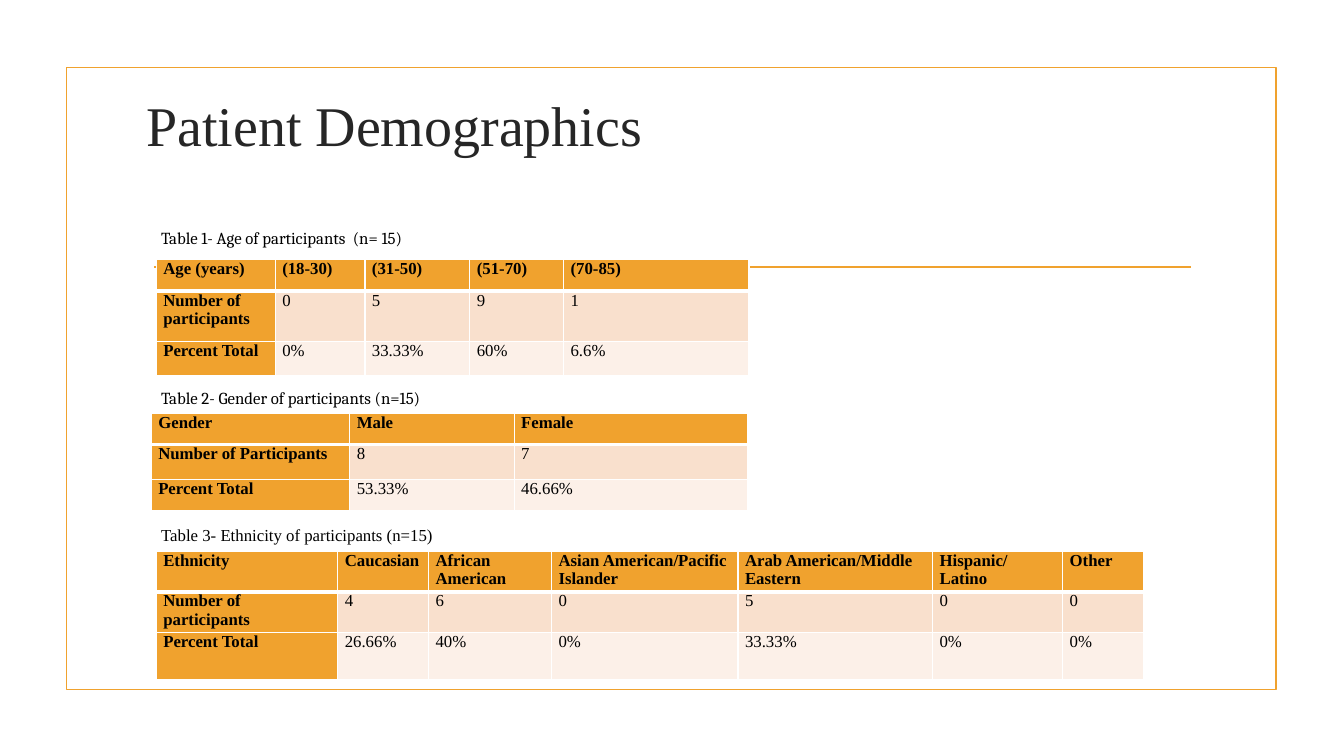
from lxml import etree
from pptx import Presentation
from pptx.dml.color import RGBColor
from pptx.enum.shapes import MSO_CONNECTOR as Connector, MSO_SHAPE as Shape
from pptx.enum.text import MSO_ANCHOR as Anchor, PP_ALIGN as Align
from pptx.oxml.ns import qn
from pptx.util import Inches, Pt

ORANGE, PEACH, CREAM = "F0A22E", "F9E0CD", "FCF0E8"
WHITE, BLACK, CHARCOAL = "FFFFFF", "000000", "262626"
SERIF, CAPTION_FONT = "Times New Roman", "Cambria"

# Each entry: caption, caption font, caption box, table corner,
# column widths, row heights, cell texts
TABLES = [
    ("Table 1- Age of participants  (n= 15)", CAPTION_FONT,
     (1.5, 2.21, 3.66, 0.3), (1.55, 2.57),
     [1.18, 0.89, 1.04, 0.93, 1.84], [0.32, 0.5, 0.34],
     [["Age (years)", "(18-30)", "(31-50)", "(51-70)", "(70-85)"],
      ["Number of participants", "0", "5", "9", "1"],
      ["Percent Total", "0%", "33.33%", "60%", "6.6%"]]),
    ("Table 2- Gender of participants (n=15)", CAPTION_FONT,
     (1.5, 3.8, 2.85, 0.3), (1.5, 4.1),
     [1.97, 1.63, 2.32], [0.31, 0.35, 0.31],
     [["Gender", "Male", "Female"],
      ["Number of Participants", "8", "7"],
      ["Percent Total", "53.33%", "46.66%"]]),
    ("Table 3- Ethnicity of participants (n=15)", SERIF,
     (1.5, 5.16, 2.99, 0.3), (1.55, 5.47),
     [1.8, 0.9, 1.22, 1.85, 1.93, 1.29, 0.8], [0.39, 0.4, 0.47],
     [["Ethnicity", "Caucasian", "African American",
       "Asian American/Pacific Islander", "Arab American/Middle Eastern",
       "Hispanic/Latino", "Other"],
      ["Number of participants", "4", "6", "0", "5", "0", "0"],
      ["Percent Total", "26.66%", "40%", "0%", "33.33%", "0%", "0%"]]),
]


def color(value):
    return RGBColor.from_string(value)


def apply(target, formats):
    for name, value in formats.items():
        setattr(target, name, value)


def write(frame, text, size, font, ink, bold=False, align=Align.LEFT):
    para = frame.paragraphs[0]
    para.alignment = align
    span = para.add_run()
    span.text = text
    apply(span.font, {"size": Pt(size), "name": font, "bold": bold})
    span.font.color.rgb = color(ink)


def add_text(page, place, text, size, font, ink, anchor=Anchor.TOP,
             align=Align.LEFT, wrap=True):
    box = page.shapes.add_textbox(*map(Inches, place))
    apply(box.text_frame, {"word_wrap": wrap, "vertical_anchor": anchor})
    write(box.text_frame, text, size, font, ink, align=align)


def add_backdrop(page, left, top, width, height):
    # Border around the content
    border = page.shapes.add_shape(
        Shape.RECTANGLE, *map(Inches, (left, top, width, height)))
    border.shadow.inherit = False
    border.fill.background()
    # Rule below the title
    rule_top = top + 1.98
    rule = page.shapes.add_connector(
        Connector.STRAIGHT,
        *map(Inches, (left + 0.87, rule_top, left + 11.15, rule_top)))
    etree.SubElement(rule._element.spPr, qn("a:effectLst"))
    for outline in (border.line, rule.line):
        outline.color.rgb = color(ORANGE)
        outline.width = Pt(1.25)


def set_borders(cell, widths):
    properties = cell._tc.get_or_add_tcPr()
    for side, width in zip("LRTB", widths):
        edge = etree.SubElement(properties, qn(f"a:ln{side}"), w=str(Pt(width)))
        fill = etree.SubElement(edge, qn("a:solidFill"))
        etree.SubElement(fill, qn("a:srgbClr"), val=WHITE)


def fill_cell(cell, text, row, column):
    heading = row == 0 or column == 0
    set_borders(cell, (1, 1, 3 if row == 1 else 1, 3 if row == 0 else 1))
    cell.fill.solid()
    cell.fill.fore_color.rgb = color(
        ORANGE if heading else (PEACH, CREAM)[row - 1])
    apply(cell, {"margin_left": Inches(0.07), "margin_right": Inches(0.08),
                 "margin_top": 0, "margin_bottom": 0})
    write(cell.text_frame, text, 12, SERIF, BLACK, bold=heading)


def add_data_table(page, corner, widths, heights, rows):
    size = (sum(widths), sum(heights))
    table = page.shapes.add_table(
        len(rows), len(widths), *map(Inches, corner + size)).table
    for column, width in zip(table.columns, widths):
        column.width = Inches(width)
    for row, height in zip(table.rows, heights):
        row.height = Inches(height)
    for r, texts in enumerate(rows):
        for c, text in enumerate(texts):
            fill_cell(table.cell(r, c), text, r, c)


def main():
    deck = Presentation()
    apply(deck, {"slide_width": Inches(13.33), "slide_height": Inches(7.5)})
    page = deck.slides.add_slide(deck.slide_layouts[6])
    add_backdrop(page, 0.66, 0.67, 12, 6.17)
    # Title
    add_text(page, (0.2, 0.68, 7.56, 1.11), "Patient Demographics ", 40, SERIF,
             CHARCOAL, Anchor.MIDDLE, Align.CENTER)
    # Captioned tables
    for caption, font, place, corner, widths, heights, rows in TABLES:
        add_text(page, place, caption, 12, font, BLACK)
        add_data_table(page, corner, widths, heights, rows)
    deck.save("out.pptx")


if __name__ == "__main__":
    main()
